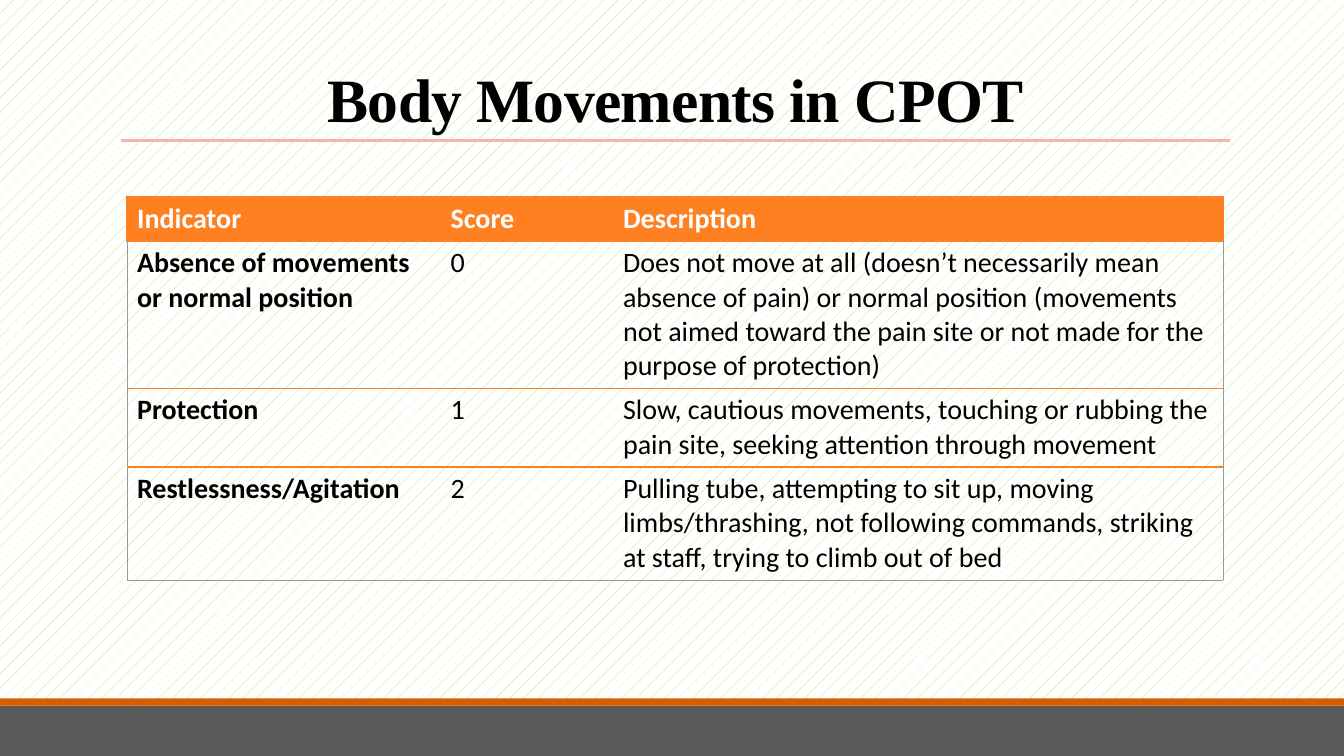
from lxml import etree
from pptx import Presentation
from pptx.dml.color import RGBColor
from pptx.enum.dml import MSO_PATTERN
from pptx.enum.shapes import MSO_CONNECTOR, MSO_SHAPE
from pptx.enum.text import MSO_ANCHOR, MSO_AUTO_SIZE, PP_ALIGN
from pptx.oxml.ns import qn
from pptx.util import Inches, Pt

DOTS = MSO_PATTERN.PERCENT_5
STRAIGHT = MSO_CONNECTOR.STRAIGHT
RECT = MSO_SHAPE.RECTANGLE
BOTTOM = MSO_ANCHOR.BOTTOM
FIXED = MSO_AUTO_SIZE.NONE
CENTER = PP_ALIGN.CENTER

COLORS = {
    "black": "000000", "white": "FFFFFF", "lime": "A7EA52", "gray": "595959",
    "rust": "D85C00", "pink": "F9B3A7", "orange": "FF8021", "frame": "999999",
}
COLS = (3.11, 1.71, 6.05)
HEIGHTS = (0.44, 1.46, 0.78, 1.12)
ROWS = (
    ("Indicator", "Score", "Description"),
    ("Absence of movements or normal position", "0",
     "Does not move at all (doesn’t necessarily mean absence of pain) or normal "
     "position (movements not aimed toward the pain site or not made for the "
     "purpose of protection)"),
    ("Protection", "1",
     "Slow, cautious movements, touching or rubbing the pain site, seeking "
     "attention through movement"),
    ("Restlessness/Agitation", "2",
     "Pulling tube, attempting to sit up, moving limbs/thrashing, not following "
     "commands, striking at staff, trying to climb out of bed"),
)


def color(name):
    """Return the named colour."""
    return RGBColor.from_string(COLORS[name])


def add_run(para, text, face, size, tint, bold):
    """Add one formatted run to a paragraph."""
    run = para.add_run()
    run.text = text
    run.font.name = face
    run.font.size = Pt(size)
    run.font.bold = bold
    run.font.color.rgb = color(tint)
    return run


def set_ground(slide):
    """Give the slide its patterned background."""
    fill = slide.background.fill
    fill.patterned()
    fill.pattern = DOTS
    fill.fore_color.rgb = color("lime")
    fill.back_color.rgb = color("white")


def add_bar(slide, top, height, tint):
    """Add a plain bar across the slide."""
    bar = slide.shapes.add_shape(
        RECT, 0, Inches(top), Inches(13.33), Inches(height))
    bar.shadow.inherit = False
    bar.fill.solid()
    bar.fill.fore_color.rgb = color(tint)
    bar.line.fill.background()


def add_rule(slide):
    """Add the line under the title."""
    rule = slide.shapes.add_connector(
        STRAIGHT, Inches(1.2), Inches(1.39), Inches(12.2), Inches(1.39))
    rule.line.color.rgb = color("pink")
    rule.line.width = Pt(2.25)
    etree.SubElement(rule._element.spPr, qn("a:effectLst"))


def set_title(slide, text):
    """Place and format the title."""
    title = slide.shapes.title
    title.left, title.top = Inches(1.2), Inches(0.31)
    title.width, title.height = Inches(11), Inches(1.08)
    frame = title.text_frame
    frame.word_wrap = True
    frame.auto_size = FIXED
    frame.vertical_anchor = BOTTOM
    para = frame.paragraphs[0]
    para.alignment = CENTER
    para.line_spacing = 0.85
    run = add_run(para, text, "Times New Roman", 44, "black", True)
    run.font._element.set("spc", "-50")


def set_edge(cell, side, tint, width):
    """Draw one cell border, or clear it when there is no tint."""
    line = etree.SubElement(
        cell._tc.get_or_add_tcPr(), qn("a:ln" + side), w=str(Pt(width)))
    if tint:
        fill = etree.SubElement(line, qn("a:solidFill"))
        etree.SubElement(fill, qn("a:srgbClr"), val=COLORS[tint])
    else:
        etree.SubElement(line, qn("a:noFill"))


def set_cell(cell, text, row, col):
    """Fill and format one table cell."""
    head = row == 0
    last = row == len(ROWS) - 1
    side = "orange" if head else "frame"
    edges = {
        "L": side if col == 0 else None,
        "R": side if col == len(COLS) - 1 else None,
        "T": "orange",
        "B": "frame" if last else "orange",
    }
    for name, tint in edges.items():
        set_edge(cell, name, tint, 0.5 if tint == "frame" else 1)
    if head:
        cell.fill.solid()
        cell.fill.fore_color.rgb = color("orange")
    else:
        cell.fill.background()
    add_run(cell.text_frame.paragraphs[0], text, "Calibri", 20,
            "white" if head else "black", head or col == 0)


def add_grid(slide):
    """Add the table of scores."""
    grid = slide.shapes.add_table(
        len(ROWS), len(COLS), Inches(1.26), Inches(1.95),
        Inches(sum(COLS)), Inches(sum(HEIGHTS))).table
    grid.horz_banding = False
    for col, width in zip(grid.columns, COLS):
        col.width = Inches(width)
    for row, height in zip(grid.rows, HEIGHTS):
        row.height = Inches(height)
    for row, texts in enumerate(ROWS):
        for col, text in enumerate(texts):
            set_cell(grid.cell(row, col), text, row, col)


def main():
    """Build and save the slide."""
    deck = Presentation()
    deck.slide_width, deck.slide_height = Inches(13.33), Inches(7.5)
    slide = deck.slides.add_slide(deck.slide_layouts[5])
    set_ground(slide)
    add_bar(slide, 7, 0.5, "gray")
    add_bar(slide, 6.93, 0.07, "rust")
    add_rule(slide)
    set_title(slide, "Body Movements in CPOT")
    add_grid(slide)
    deck.save("out.pptx")


if __name__ == "__main__":
    main()
